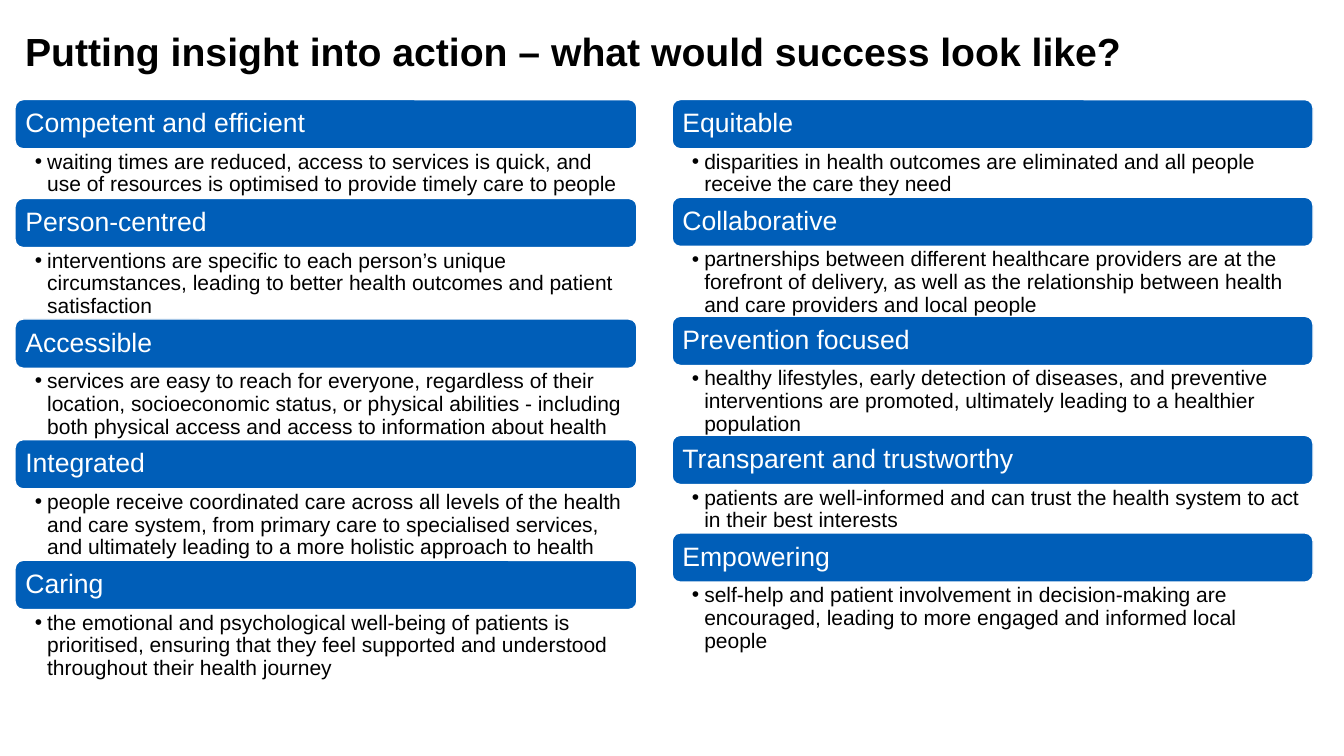
from lxml.etree import SubElement
from pptx import Presentation
from pptx.dml.color import RGBColor
from pptx.enum.shapes import MSO_SHAPE
from pptx.enum.text import MSO_ANCHOR, MSO_AUTO_SIZE, PP_ALIGN
from pptx.oxml.ns import qn
from pptx.util import Cm, Pt

BLUE, WHITE, BLACK = "005EB8", "FFFFFF", "000000"
TOP = 2.51
BAR_HEIGHT = 1.24

# Each theme: heading, description, height of the description in cm
LEFT_THEMES = [
    ("Competent and efficient",
     "waiting times are reduced, access to services is quick, and use of "
     "resources is optimised to provide timely care to people", 1.25),
    ("Person-centred",
     "interventions are specific to each person’s unique circumstances, "
     "leading to better health outcomes and patient satisfaction", 1.8),
    ("Accessible",
     "services are easy to reach for everyone, regardless of their location, "
     "socioeconomic status, or physical abilities - including both physical "
     "access and access to information about health", 1.8),
    ("Integrated",
     "people receive coordinated care across all levels of the health and "
     "care system, from primary care to specialised services, and ultimately "
     "leading to a more holistic approach to health", 1.8),
    ("Caring",
     "the emotional and psychological well-being of patients is prioritised, "
     "ensuring that they feel supported and understood throughout their "
     "health journey", 1.8),
]
RIGHT_THEMES = [
    ("Equitable",
     "disparities in health outcomes are eliminated and all people receive "
     "the care they need", 1.22),
    ("Collaborative",
     "partnerships between different healthcare providers are at the "
     "forefront of delivery, as well as the relationship between health and "
     "care providers and local people", 1.76),
    ("Prevention focused",
     "healthy lifestyles, early detection of diseases, and preventive "
     "interventions are promoted, ultimately leading to a healthier "
     "population", 1.76),
    ("Transparent and trustworthy",
     "patients are well-informed and can trust the health system to act in "
     "their best interests", 1.22),
    ("Empowering",
     "self-help and patient involvement in decision-making are encouraged, "
     "leading to more engaged and informed local people", 2.46),
]


def colour(hex_string):
    return RGBColor.from_string(hex_string)


def add_run(paragraph, text, size, hex_string, bold=False):
    run = paragraph.add_run()
    run.text = text
    run.font.name = "Arial"
    run.font.size = Pt(size)
    run.font.bold = bold
    run.font.color.rgb = colour(hex_string)


def set_insets(frame, left, right, vertical):
    frame.margin_left, frame.margin_right = Cm(left), Cm(right)
    frame.margin_top = frame.margin_bottom = Cm(vertical)


def add_bullet(paragraph, indent):
    properties = paragraph._p.get_or_add_pPr()
    properties.set("marL", str(Cm(indent)))
    properties.set("indent", str(-Cm(indent)))
    SubElement(properties, qn("a:buFont"), typeface="Arial")
    SubElement(properties, qn("a:buChar"), char="•")


def fill_title(title, text):
    title.left, title.top = Cm(0.38), Cm(0.56)
    title.width, title.height = Cm(29.67), Cm(1.45)
    frame = title.text_frame
    frame.auto_size = MSO_AUTO_SIZE.NONE
    frame.vertical_anchor = MSO_ANCHOR.TOP
    paragraph = frame.paragraphs[0]
    paragraph.alignment = PP_ALIGN.LEFT
    add_run(paragraph, text, 28, BLACK, bold=True)


def add_heading(slide, text, left, top, width):
    bar = slide.shapes.add_shape(MSO_SHAPE.ROUNDED_RECTANGLE, Cm(left),
                                 Cm(top), Cm(width), Cm(BAR_HEIGHT))
    bar.shadow.inherit = False
    bar.fill.solid()
    bar.fill.fore_color.rgb = colour(BLUE)
    bar.line.color.rgb = colour(WHITE)
    bar.line.width = Pt(1)
    frame = bar.text_frame
    set_insets(frame, 0.2, 0.2, 0.2)
    frame.vertical_anchor = MSO_ANCHOR.MIDDLE
    paragraph = frame.paragraphs[0]
    paragraph.alignment = PP_ALIGN.LEFT
    paragraph.line_spacing = 0.9
    add_run(paragraph, text, 19, WHITE)


def add_description(slide, text, left, top, width, height, right_inset):
    description = slide.shapes.add_textbox(Cm(left), Cm(top), Cm(width),
                                           Cm(height))
    frame = description.text_frame
    frame.word_wrap = True
    set_insets(frame, 0.5, right_inset, 0.06)
    paragraph = frame.paragraphs[0]
    paragraph.level = 1
    add_bullet(paragraph, 0.31)
    paragraph.line_spacing = 0.9
    add_run(paragraph, text, 15, BLACK)


def add_column(slide, themes, left, width, right_inset):
    top = TOP
    for heading, description, height in themes:
        add_heading(slide, heading, left, top, width)
        top += BAR_HEIGHT
        add_description(slide, description, left, top, width, height,
                        right_inset)
        top += height


def main():
    presentation = Presentation()
    presentation.slide_width, presentation.slide_height = Cm(33.87), Cm(19.05)
    title_only = presentation.slide_layouts[5]
    slide = presentation.slides.add_slide(title_only)

    # Title
    fill_title(slide.shapes.title,
               "Putting insight into action – what would success look like?")

    # Two columns of themes
    add_column(slide, LEFT_THEMES, left=0.38, width=15.67, right_inset=0.37)
    add_column(slide, RIGHT_THEMES, left=16.94, width=16.15, right_inset=0.3)

    presentation.save("out.pptx")


if __name__ == "__main__":
    main()
